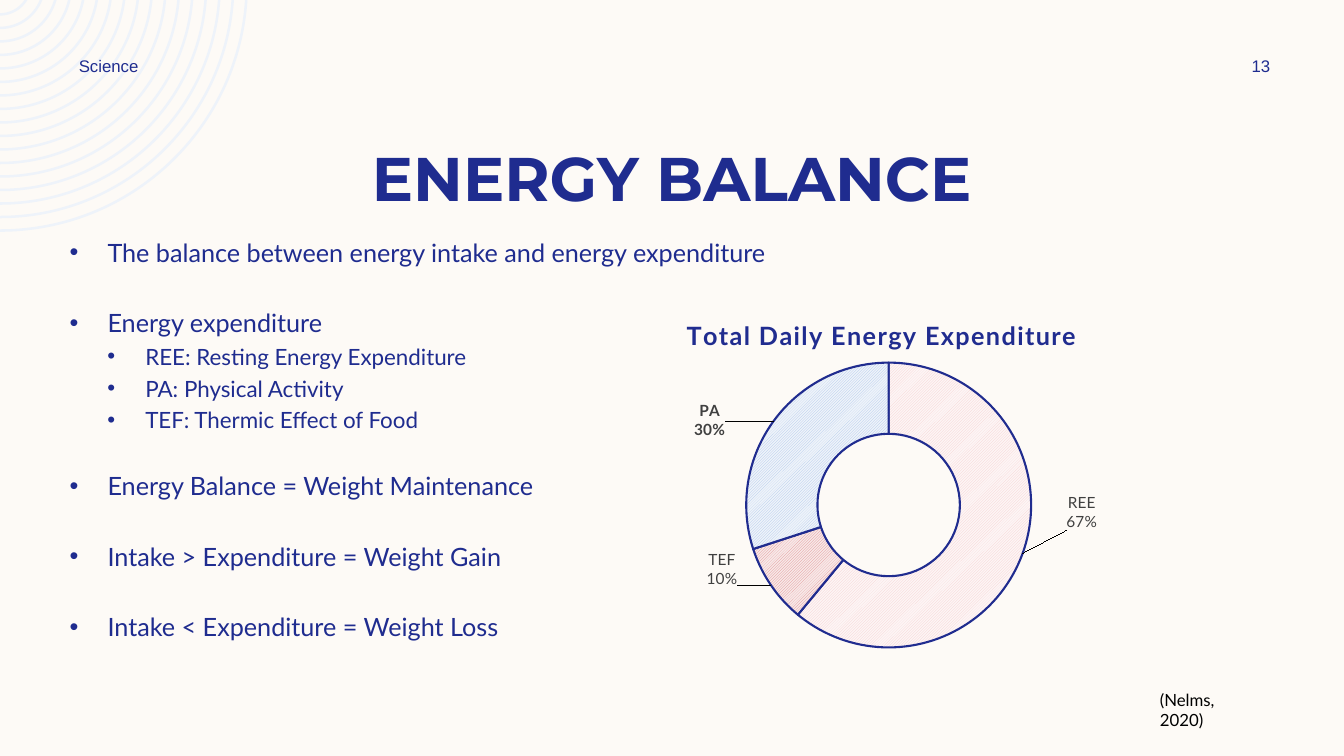
"""Build the Energy Balance slide with its bullet list and doughnut chart."""
from math import asin, cos, pi, sin, tan

from lxml import etree
from pptx import Presentation
from pptx.chart.data import CategoryChartData
from pptx.dml.color import RGBColor
from pptx.enum.chart import XL_CHART_TYPE
from pptx.enum.dml import MSO_PATTERN
from pptx.enum.text import MSO_ANCHOR, MSO_AUTO_SIZE, PP_ALIGN
from pptx.oxml import parse_xml
from pptx.oxml.ns import nsdecls, qn
from pptx.util import Inches, Pt

DOUGHNUT = XL_CHART_TYPE.DOUGHNUT
HATCH = MSO_PATTERN.LIGHT_UPWARD_DIAGONAL
TOP, MIDDLE = MSO_ANCHOR.TOP, MSO_ANCHOR.MIDDLE
LEFT, CENTER = PP_ALIGN.LEFT, PP_ALIGN.CENTER
NO_AUTOFIT = MSO_AUTO_SIZE.NONE

COLORS = {
    "background": "FDFAF6", "rings": "EEF3FA", "navy": "1F2C8F",
    "outline": "202C8F", "label": "404040", "black": "000000",
}
HATCHES = [("F5CDCE", "FDF5F5"), ("DE8C8C", "F8E8E8"), ("AAC3E8", "EEF3FA")]

presentation = Presentation()
presentation.slide_width = Inches(13.33)
presentation.slide_height = Inches(7.5)
COLUMN = presentation.slide_width / 160
ROW = presentation.slide_height / 90


def cells(left, top, width, height):
    """Turn grid columns and rows into lengths."""
    return [round(n * unit) for n, unit in zip((left, top, width, height), (COLUMN, ROW) * 2)]


def write(paragraph, text, size=12, font="Lato", color="navy", bold=False, align=LEFT, before=0):
    """Add one formatted run to a paragraph."""
    paragraph.alignment = align
    paragraph.space_before = Pt(before)
    run = paragraph.add_run()
    run.text = text
    run.font.size = Pt(size)
    run.font.name = font
    run.font.bold = bold
    run.font.color.rgb = RGBColor.from_string(COLORS[color])
    return run


slide = presentation.slides.add_slide(presentation.slide_layouts[1])
slide.background.fill.solid()
slide.background.fill.fore_color.rgb = RGBColor.from_string(COLORS["background"])

RING_COUNT, RING_STEP, RING_WIDTH, RING_RISE = 17, 0.134, 0.025, 0.16
builder = slide.shapes.build_freeform(0, 0)
builder.add_line_segments([(Inches(2.45), 0), (Inches(2.45), Inches(2.3)), (0, Inches(2.3))])
rings = builder.convert_to_shape()
rings.shadow.inherit = False
rings.fill.solid()
rings.fill.fore_color.rgb = RGBColor.from_string(COLORS["rings"])
rings.line.fill.background()
outline = rings._element.find(".//" + qn("a:path"))
for command in list(outline):
    outline.remove(command)
for ring in range(RING_COUNT):
    outer = 2.46 - ring * RING_STEP
    arcs = []
    for radius in (outer, outer - RING_WIDTH):
        start = asin(RING_RISE / radius)
        reach = radius * 4 / 3 * tan((pi / 2 - start) / 4)
        x, bottom = radius * cos(start), radius - RING_RISE
        arcs.append([(x, 0), (x - reach * sin(start), reach * cos(start)), (reach, bottom), (0, bottom)])
    inner = arcs[1][::-1]
    for name, points in (("moveTo", arcs[0][:1]), ("cubicBezTo", arcs[0][1:]),
                         ("lnTo", inner[:1]), ("cubicBezTo", inner[1:]), ("close", [])):
        command = etree.SubElement(outline, qn("a:" + name))
        for x, y in points:
            etree.SubElement(command, qn("a:pt"), x=str(Inches(x)), y=str(Inches(y)))

title, body = slide.shapes.title, slide.placeholders[1]
for placeholder, area in ((title, (10, 16, 140, 10)), (body, (7.1, 27.6, 146, 58.2))):
    placeholder.left, placeholder.top, placeholder.width, placeholder.height = cells(*area)
    placeholder.text_frame.auto_size = NO_AUTOFIT
title.text_frame.vertical_anchor = MIDDLE
write(title.text_frame.paragraphs[0], "ENERGY BALANCE", 44, "Montserrat", bold=True, align=CENTER)

BULLETS = [
    ("The balance between energy intake and energy expenditure", 0, 0),
    ("Energy expenditure", 0, 28.8),
    ("REE: Resting Energy Expenditure", 1, 3.6),
    ("PA: Physical Activity", 1, 3.6),
    ("TEF: Thermic Effect of Food", 1, 3.6),
    ("Energy Balance = Weight Maintenance", 0, 26.4),
    ("Intake > Expenditure = Weight Gain", 0, 28.8),
    ("Intake < Expenditure = Weight Loss", 0, 28.8),
]
body.text_frame.vertical_anchor = TOP
for index, (text, level, before) in enumerate(BULLETS):
    paragraph = body.text_frame.add_paragraph() if index else body.text_frame.paragraphs[0]
    paragraph.level = level
    write(paragraph, text, 18 - 2 * level, before=before)
    properties = paragraph._p.get_or_add_pPr()
    properties.set("marL", str(Inches(0.375 * (level + 1))))
    properties.set("indent", str(-Inches(0.375)))
    etree.SubElement(properties, qn("a:buFont")).set("typeface", "Arial")
    etree.SubElement(properties, qn("a:buChar")).set("char", "•")

TEXT_BOXES = [
    ("Science", (8.2, 6, 42, 3.6), MIDDLE, {"font": "Arial"}),
    ("13", (143.6, 6, 13, 3.6), MIDDLE, {"font": "Arial", "align": CENTER}),
    ("(Nelms, 2020)", (136.9, 81.5, 14.3, 3.6), TOP, {"color": "black"}),
]
for text, area, anchor, style in TEXT_BOXES:
    frame = slide.shapes.add_textbox(*cells(*area)).text_frame
    frame.word_wrap = True
    frame.vertical_anchor = anchor
    write(frame.paragraphs[0], text, **style)

chart_data = CategoryChartData(number_format="0")
chart_data.categories = ["REE", "TEF", "PA"]
chart_data.add_series("Series 1", (61, 9, 30))
chart = slide.shapes.add_chart(DOUGHNUT, *cells(63.4, 34.6, 84.8, 44.4), chart_data).chart
chart.has_legend = False
chart.font.name = "Lato"
chart.font.size = Pt(10)
chart.font.color.rgb = RGBColor.from_string(COLORS["black"])
chart.has_title = True
heading = write(chart.chart_title.text_frame.paragraphs[0], "Total Daily Energy Expenditure",
                18, color="outline", bold=True, align=CENTER)
heading.font._element.set("spc", "100")

plot = chart.plots[0]
plot.vary_by_categories = True
series = plot.series[0]
labels = series.data_labels
labels.show_value = False
labels.show_percentage = labels.show_category_name = True
labels.number_format, labels.number_format_is_linked = "0%", False
labels.font.name, labels.font.size, labels.font.bold = "Lato", Pt(11), True
labels.font.color.rgb = RGBColor.from_string(COLORS["label"])

LAYOUT = '<c:layout %s><c:manualLayout>{}</c:manualLayout></c:layout>' % nsdecls("c")
OFFSET = '<c:x val="{}"/><c:y val="{}"/>'
EDGES = '<c:xMode val="edge"/><c:yMode val="edge"/>'
CUSTOM_LABELS = [("REE", "67%"), ("TEF", "10%"), None]
LABEL_OFFSETS = [(0.13, -0.08), (-0.11, 0.01), (-0.13, -0.06)]
for index, (foreground, background) in enumerate(HATCHES):
    point = series.points[index]
    point.format.fill.patterned()
    point.format.fill.pattern = HATCH
    point.format.fill.fore_color.rgb = RGBColor.from_string(foreground)
    point.format.fill.back_color.rgb = RGBColor.from_string(background)
    point.format.line.color.rgb = RGBColor.from_string(COLORS["outline"])
    point.format.line.width = Pt(1.5)
    if CUSTOM_LABELS[index]:
        frame = point.data_label.text_frame
        write(frame.paragraphs[0], CUSTOM_LABELS[index][0], 11, color="label")
        write(frame.add_paragraph(), CUSTOM_LABELS[index][1], 11, color="label")
    else:
        font = point.data_label.font
        font.name, font.size, font.bold = "Lato", Pt(11), True
        font.color.rgb = RGBColor.from_string(COLORS["label"])
    label = labels._element.findall(qn("c:dLbl"))[index]
    label.find(qn("c:idx")).addnext(parse_xml(LAYOUT.format(OFFSET.format(*LABEL_OFFSETS[index]))))
    for name, shown in (("showVal", "0"), ("showCatName", "1"), ("showPercent", "1")):
        label.find(qn("c:" + name)).set("val", shown)
    etree.SubElement(label, qn("c:separator")).text = "\n"

title_element = chart.chart_title._element
for old_layout in title_element.findall(qn("c:layout")):
    title_element.remove(old_layout)
title_element.find(qn("c:tx")).addnext(parse_xml(LAYOUT.format(EDGES + OFFSET.format(0.21, 0.06))))
plot_area = plot._element.getparent()
for old_layout in plot_area.findall(qn("c:layout")):
    plot_area.remove(old_layout)
plot_area.insert(0, parse_xml(LAYOUT.format(
    '<c:layoutTarget val="inner"/>' + EDGES + OFFSET.format(0.3, 0.19)
    + '<c:w val="0.4"/><c:h val="0.77"/>')))

presentation.save("out.pptx")
